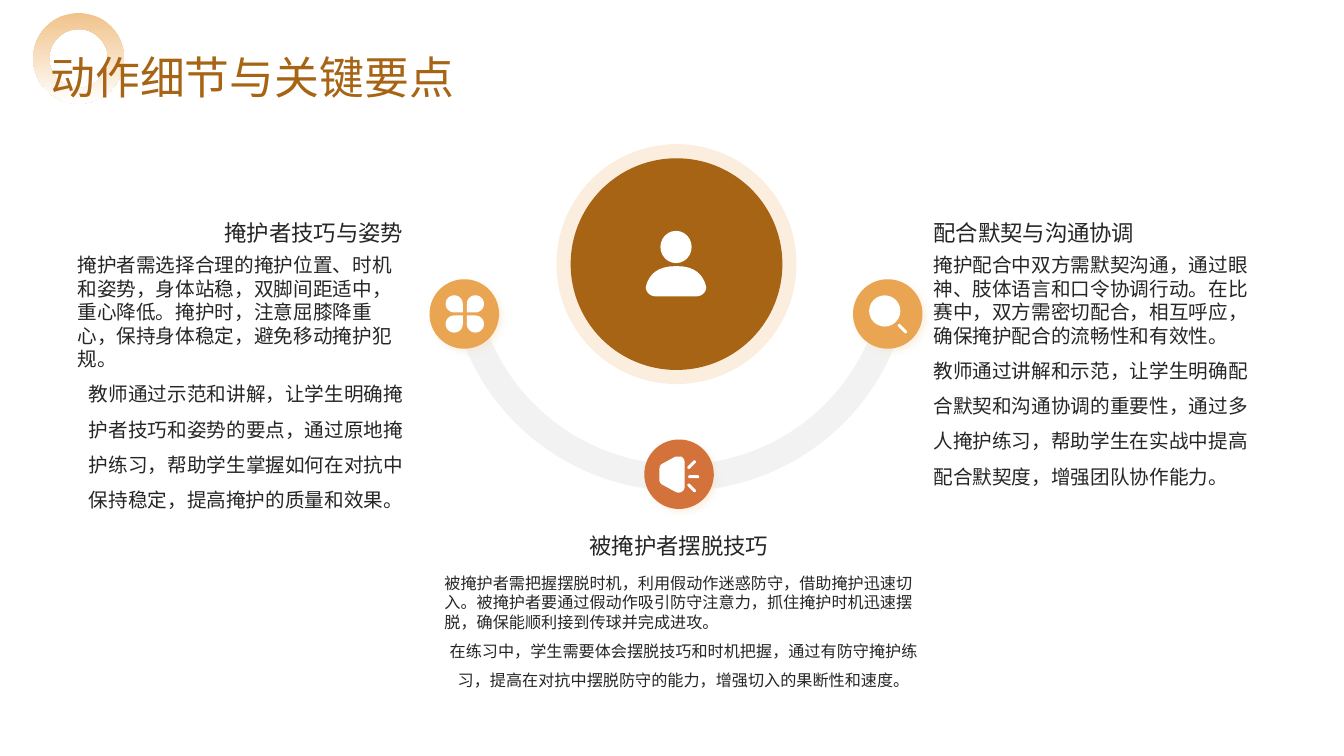
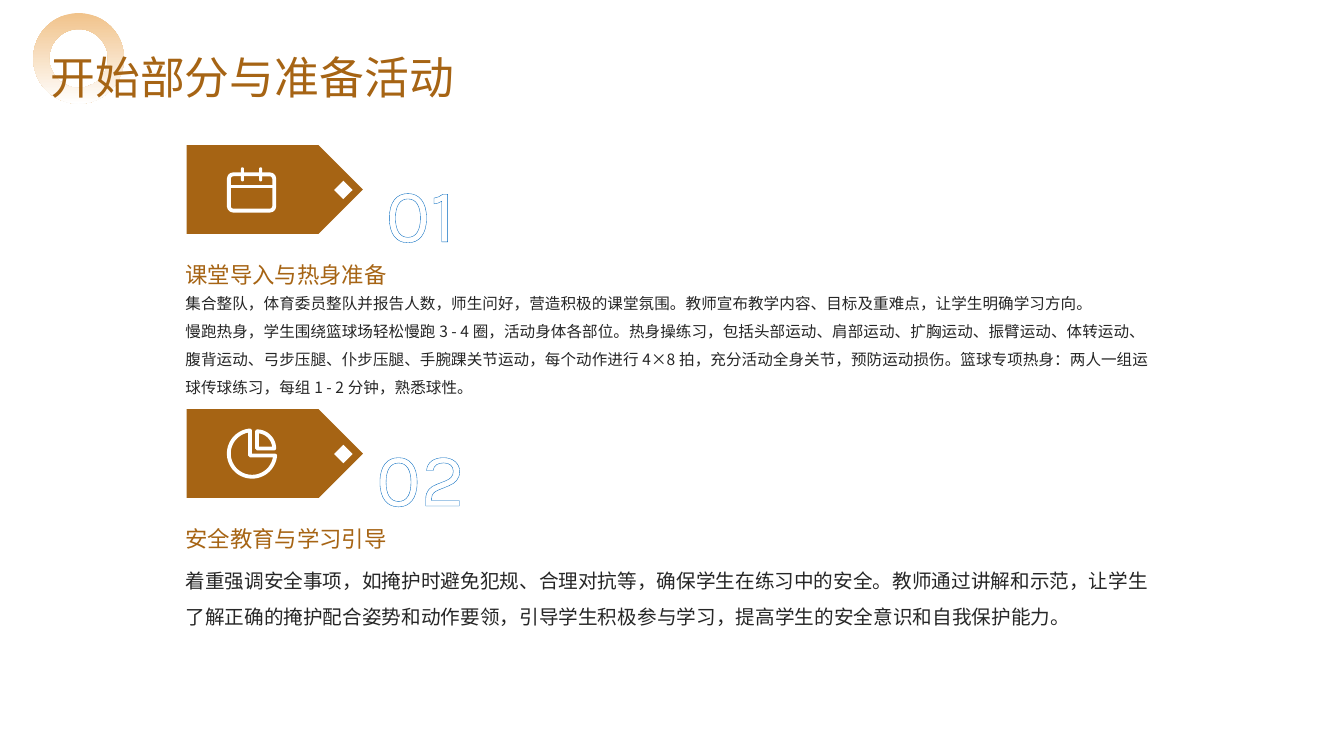
import math

from lxml import etree
from pptx import Presentation
from pptx.dml.color import RGBColor
from pptx.enum import shapes, text
from pptx.oxml import ns
from pptx.util import Inches, Pt

BROWN, AMBER, RUST = "A66414", "EAA552", "D3723B"
INK, WHITE, PALE = "262626", "FFFFFF", "F2F2F2"
CJK = "Noto Sans CJK SC"
KIND = shapes.MSO_SHAPE
LEFT, CENTER, RIGHT = text.PP_ALIGN.LEFT, text.PP_ALIGN.CENTER, text.PP_ALIGN.RIGHT
TOP, MIDDLE, BOTTOM = text.MSO_ANCHOR.TOP, text.MSO_ANCHOR.MIDDLE, text.MSO_ANCHOR.BOTTOM


def draw(slide, kind, box, colour=None, rotation=0, outline=None):
    """Add a preset shape or, when kind is None, closed outlines given as lists of points."""
    if kind is None:
        contours = [[(Inches(x), Inches(y)) for x, y in points] for points in box]
        builder = slide.shapes.build_freeform(*contours[0][0])
        for i, points in enumerate(contours):
            if i:
                builder.move_to(*points[0])
            builder.add_line_segments(points[1:])
        shape = builder.convert_to_shape()
    else:
        shape = slide.shapes.add_shape(kind, *map(Inches, box))
    shape.shadow.inherit = False
    shape.rotation = rotation
    if colour:
        shape.fill.solid()
        shape.fill.fore_color.rgb = RGBColor.from_string(colour)
    else:
        shape.fill.background()
    if outline:
        shape.line.color.rgb = RGBColor.from_string(outline)
        shape.line.width = Pt(2.75)
    else:
        shape.line.fill.background()
    return shape


def write(slide, box, paragraphs, size, colour=INK, inset=0.0, anchor=TOP, font=CJK):
    """Add a text box; each paragraph is (words, alignment, line spacing)."""
    frame = slide.shapes.add_textbox(*map(Inches, box)).text_frame
    frame.word_wrap = True
    frame.vertical_anchor = anchor
    frame.margin_left = frame.margin_right = Inches(inset)
    frame.margin_top = frame.margin_bottom = Inches(inset / 2)
    for i, (words, align, spacing) in enumerate(paragraphs):
        paragraph = frame.add_paragraph() if i else frame.paragraphs[0]
        paragraph.text = words
        paragraph.alignment = align
        paragraph.line_spacing = spacing
        if spacing == 1.0:
            # Plain paragraphs keep punctuation inside the margin
            paragraph._p.get_or_add_pPr().set("hangingPunct", "0")
        run = paragraph.runs[0]
        run.font.size = Pt(size)
        run.font.name = font
        run.font.color.rgb = RGBColor.from_string(colour)
        east_asian = etree.SubElement(run.font._element, ns.qn("a:ea"))
        east_asian.set("typeface", font)
    return frame


deck = Presentation()
deck.slide_width, deck.slide_height = Inches(13.33), Inches(7.5)

# Header shared by both slides
pages = []
for title in ("动作细节与关键要点", "开始部分与准备活动"):
    page = deck.slides.add_slide(deck.slide_layouts[6])
    ring = draw(page, KIND.DONUT, (0.33, 0.13, 0.9, 0.9), WHITE)
    ring.adjustments[0] = 0.176
    ring.fill.gradient()
    ring.fill.gradient_angle = 270
    for stop, colour, position in zip(ring.fill.gradient_stops, ("F1C38B", WHITE), (0, 1)):
        stop.color.rgb = RGBColor.from_string(colour)
        stop.position = position
    write(page, (0.5, 0.47, 11.32, 0.47), [(title, LEFT, 1.2)], 32, BROWN, anchor=MIDDLE)
    pages.append(page)
details, opening = pages

# Slide 1: arc with three stations
arc = draw(details, KIND.BLOCK_ARC, (4.44, 0.27, 4.6, 4.6), PALE, 180)
for i, value in enumerate((115.884, 207.855, 0.057)):
    arc.adjustments[i] = value

for x, y, colour in ((4.26, 2.77, AMBER), (6.39, 4.36, RUST), (8.46, 2.77, AMBER)):
    station = draw(details, KIND.FLOWCHART_CONNECTOR, (x, y, 0.69, 0.69), colour, 310.8)
    effects = station.element.spPr.find(ns.qn("a:effectLst"))
    shadow = etree.SubElement(effects, ns.qn("a:outerShdw"), blurRad=str(Pt(4)),
                              dist=str(Pt(3)), dir=str(45 * 60000), rotWithShape="0")
    shade = etree.SubElement(shadow, ns.qn("a:srgbClr"), val="F8E1C5")
    etree.SubElement(shade, ns.qn("a:alpha"), val="40000")

halo = draw(details, KIND.FLOWCHART_CONNECTOR, (5.52, 1.43, 2.38, 2.38), AMBER, 310.8)
tint = halo.element.spPr.find(".//" + ns.qn("a:srgbClr"))
etree.SubElement(tint, ns.qn("a:alpha"), val="19000")
draw(details, KIND.FLOWCHART_CONNECTOR, (5.66, 1.57, 2.1, 2.1), BROWN, 310.8)

# Clover: four round petals, each with a square corner towards the middle
petals = []
for side, rise, first in ((-1, -1, 90), (1, -1, 180), (1, 1, 270), (-1, 1, 0)):
    x, y = 4.61 + side * 0.105, 3.115 + rise * 0.1
    arc_points = [(x + 0.085 * math.cos(math.radians(a)), y + 0.085 * math.sin(math.radians(a)))
                  for a in range(first, first + 271, 10)]
    petals.append([(x - side * 0.085, y - rise * 0.085), *arc_points])
draw(details, None, petals, WHITE)

# Magnifier lens, its handle, and the rays of the megaphone
draw(details, KIND.OVAL, (8.62, 2.93, 0.31, 0.31), WHITE)
for x, y, length, turn in ((8.95, 3.26, 0.12, 45), (6.86, 4.84, 0.11, 45),
                           (6.88, 4.73, 0.11, 0), (6.86, 4.61, 0.11, -45)):
    bar = draw(details, KIND.ROUNDED_RECTANGLE,
               (x - length / 2, y - 0.015, length, 0.03), WHITE, turn)
    bar.adjustments[0] = 0.5

# Curved outlines: a start point, then cubic curves as (control, control, end)
megaphone = [(6.73, 4.53),
             ((6.74, 4.53), (6.75, 4.53), (6.76, 4.53)),
             ((6.78, 4.55), (6.79, 4.56), (6.79, 4.59)),
             ((6.79, 4.67), (6.79, 4.75), (6.79, 4.83)),
             ((6.79, 4.85), (6.78, 4.87), (6.76, 4.88)),
             ((6.74, 4.89), (6.72, 4.89), (6.7, 4.88)),
             ((6.66, 4.86), (6.61, 4.83), (6.57, 4.81)),
             ((6.55, 4.8), (6.54, 4.78), (6.54, 4.76)),
             ((6.54, 4.73), (6.54, 4.69), (6.54, 4.66)),
             ((6.54, 4.63), (6.55, 4.61), (6.57, 4.6)),
             ((6.61, 4.58), (6.66, 4.55), (6.7, 4.53))]
shoulders = [(6.71, 2.64),
             ((6.9, 2.64), (6.97, 2.73), (7, 2.83)),
             ((7.02, 2.88), (6.97, 2.94), (6.91, 2.94)),
             ((6.77, 2.94), (6.64, 2.94), (6.5, 2.94)),
             ((6.44, 2.94), (6.39, 2.88), (6.41, 2.83)),
             ((6.44, 2.73), (6.51, 2.64), (6.71, 2.64))]
for start, *curves in (megaphone, shoulders):
    points = [start]
    for curve in curves:
        corners = (points[-1], *curve)
        for t in (n / 8 for n in range(1, 9)):
            weights = ((1 - t) ** 3, 3 * t * (1 - t) ** 2, 3 * t * t * (1 - t), t ** 3)
            points.append(tuple(sum(w * c[axis] for w, c in zip(weights, corners))
                                for axis in (0, 1)))
    draw(details, None, [points], WHITE)
draw(details, KIND.OVAL, (6.55, 2.29, 0.31, 0.32), WHITE)

techniques = [
    ("掩护者技巧与姿势", (0.67, 2.1, 3.43, 0.4), (0.67, 2.46, 3.43, 2.91), RIGHT, 14,
     "掩护者需选择合理的掩护位置、时机和姿势，身体站稳，双脚间距适中，重心降低。掩护时，注意屈膝降重心，保持身体稳定，避免移动掩护犯规。",
     "教师通过示范和讲解，让学生明确掩护者技巧和姿势的要点，通过原地掩护练习，帮助学生掌握如何在对抗中保持稳定，提高掩护的质量和效果。"),
    ("被掩护者摆脱技巧", (5.02, 5.2, 3.43, 0.4), (4.31, 5.64, 4.94, 1.58), CENTER, 11.5,
     "被掩护者需把握摆脱时机，利用假动作迷惑防守，借助掩护迅速切入。被掩护者要通过假动作吸引防守注意力，抓住掩护时机迅速摆脱，确保能顺利接到传球并完成进攻。",
     "在练习中，学生需要体会摆脱技巧和时机把握，通过有防守掩护练习，提高在对抗中摆脱防守的能力，增强切入的果断性和速度。"),
    ("配合默契与沟通协调", (9.16, 2.1, 3.43, 0.4), (9.16, 2.46, 3.43, 2.89), LEFT, 14,
     "掩护配合中双方需默契沟通，通过眼神、肢体语言和口令协调行动。在比赛中，双方需密切配合，相互呼应，确保掩护配合的流畅性和有效性。",
     "教师通过讲解和示范，让学生明确配合默契和沟通协调的重要性，通过多人掩护练习，帮助学生在实战中提高配合默契度，增强团队协作能力。"),
]
for heading, heading_box, body_box, align, size, skill, teaching in techniques:
    write(details, heading_box, [(heading, align, 1.1)], 16, inset=0.1)
    write(details, body_box, [(skill, LEFT, 1.0), (teaching, align, 1.5)], size, inset=0.1)

# Slide 2: two numbered sections
sections = [
    ("01", 1.44, "课堂导入与热身准备", 2.92, 11.1,
     [("集合整队，体育委员整队并报告人数，师生问好，营造积极的课堂氛围。教师宣布教学内容、目标及重难点，让学生明确学习方向。", LEFT, 1.0),
      ("慢跑热身，学生围绕篮球场轻松慢跑3 - 4圈，活动身体各部位。热身操练习，包括头部运动、肩部运动、扩胸运动、振臂运动、体转运动、腹背运动、弓步压腿、仆步压腿、手腕踝关节运动，每个动作进行4×8拍，充分活动全身关节，预防运动损伤。篮球专项热身：两人一组运球传球练习，每组1 - 2分钟，熟悉球性。", LEFT, 1.5)]),
    ("02", 4.06, "安全教育与学习引导", 5.53, 14,
     [("着重强调安全事项，如掩护时避免犯规、合理对抗等，确保学生在练习中的安全。教师通过讲解和示范，让学生了解正确的掩护配合姿势和动作要领，引导学生积极参与学习，提高学生的安全意识和自我保护能力。", LEFT, 1.5)]),
]
for number, top, heading, body_top, size, body in sections:
    draw(opening, KIND.PENTAGON, (1.85, top, 1.75, 0.88), BROWN)
    draw(opening, KIND.RECTANGLE, (3.34, top + 0.38, 0.13, 0.13), WHITE, 45)
    numeral = write(opening, (3.65, top - 0.06, 1.04, 1.08), [(number, CENTER, 1.3)],
                    54, WHITE, font="Karla")
    properties = numeral.paragraphs[0].runs[0].font._element
    stroke = etree.Element(ns.qn("a:ln"), w=str(Pt(1.25)))
    paint = etree.SubElement(stroke, ns.qn("a:solidFill"))
    etree.SubElement(paint, ns.qn("a:srgbClr"), val="0068BF")
    properties.insert(0, stroke)
    write(opening, (1.84, top + 1.02, 9.64, 0.4), [(heading, LEFT, 1.3)], 16, BROWN,
          anchor=BOTTOM)
    write(opening, (1.84, body_top, 9.64, 1.18), body, size)

# Calendar
calendar = draw(opening, KIND.ROUNDED_RECTANGLE, (2.27, 1.73, 0.45, 0.36), outline=WHITE)
calendar.adjustments[0] = 0.12
rule = opening.shapes.add_connector(shapes.MSO_CONNECTOR.STRAIGHT, Inches(2.27),
                                    Inches(1.85), Inches(2.72), Inches(1.85))
rule.line.color.rgb = RGBColor.from_string(WHITE)
rule.line.width = Pt(2.75)
etree.SubElement(rule.element.spPr, ns.qn("a:effectLst"))
for x in (2.39, 2.57):
    ring_pin = draw(opening, KIND.ROUNDED_RECTANGLE, (x, 1.66, 0.03, 0.14), WHITE)
    ring_pin.adjustments[0] = 0.5

# Pie with a lifted quarter: corner, centre and radius of the rim, angles
for corner, (x, y), radius, first, last in (((2.48, 4.52), (2.5, 4.5), 0.23, 5, 265),
                                            ((2.55, 4.45), (2.55, 4.45), 0.17, 270, 360)):
    rim = [(x + radius * math.cos(math.radians(a)), y + radius * math.sin(math.radians(a)))
           for a in range(first, last + 1, 5)]
    draw(opening, None, [[corner, *rim]], outline=WHITE)

deck.save("out.pptx")
